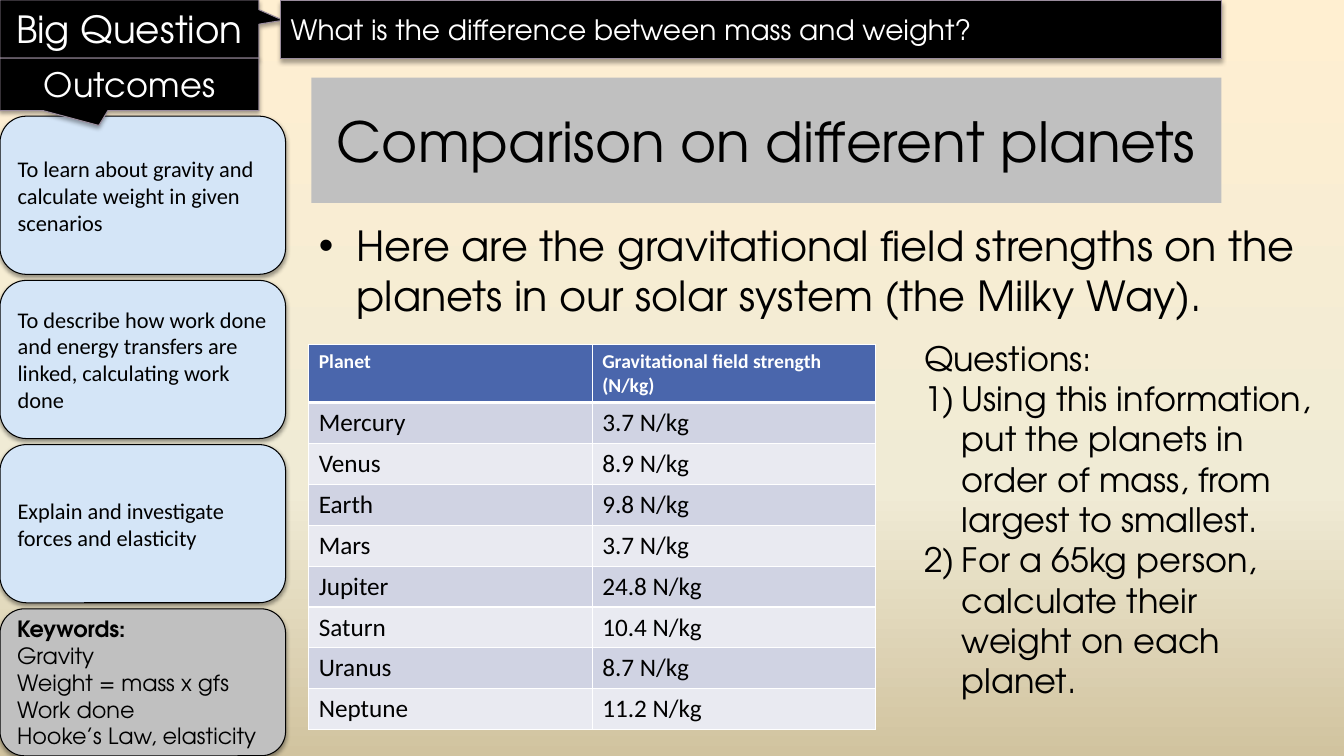
from copy import deepcopy

from lxml.etree import SubElement
from pptx import Presentation
from pptx.dml.color import RGBColor
from pptx.enum.shapes import MSO_SHAPE
from pptx.enum.text import MSO_ANCHOR, MSO_AUTO_SIZE, PP_ALIGN
from pptx.oxml import parse_xml
from pptx.oxml.ns import nsdecls, qn
from pptx.util import Pt

HEADING, BODY = "TeX Gyre Adventor", "Calibri"
BLACK, WHITE, GREY, BLUE = "000000", "FFFFFF", "C0C0C0", "D4E5F7"


def rgb(value):
    return RGBColor.from_string(value)


def write(tf, lines, size, name=HEADING, color=BLACK, align=PP_ALIGN.LEFT, anchor=MSO_ANCHOR.TOP):
    """Fill a text frame with one paragraph per line, all in one format."""
    for key, value in {"word_wrap": True, "auto_size": MSO_AUTO_SIZE.NONE, "vertical_anchor": anchor}.items():
        setattr(tf, key, value)
    tf.text = "\n".join(lines)
    for p in tf.paragraphs:
        p.alignment, p.space_before = align, Pt(0)
        for r in p.runs:
            for key, value in {"size": Pt(size), "name": name, "bold": False}.items():
                setattr(r.font, key, value)
            r.font.color.rgb = rgb(color)


prs = Presentation()
prs.slide_width, prs.slide_height = Pt(960), Pt(540)
s = prs.slides.add_slide(prs.slide_layouts[1])

# Background gradient, top to bottom
fill = s.background.fill
fill.gradient()
fill.gradient_angle = 270
stop_list = s._element.find(".//" + qn("a:gsLst"))
for gs in list(stop_list)[2:]:
    stop_list.remove(gs)
stop_list.append(deepcopy(stop_list[0]))
for stop, (position, color) in zip(fill.gradient_stops, [(0, "FFEFD1"), (0.65, "F0EBD5"), (1, "D1C39F")]):
    stop.position = position
    stop.color.rgb = rgb(color)

# Banner, outcome cards and keywords
CALLOUT, RECT, CARD = MSO_SHAPE.RECTANGULAR_CALLOUT, MSO_SHAPE.RECTANGLE, MSO_SHAPE.ROUNDED_RECTANGLE
outcomes = [
    "To learn about gravity and calculate weight in given scenarios",
    "To describe how work done and energy transfers are linked, calculating work done",
    "Explain and investigate forces and elasticity",
]
keywords = ["Keywords:", "Gravity", "Weight = mass x gfs", "Work done", "Hooke’s Law, elasticity"]
CARD_TOP, CARD_STEP = 83, 117.3
panels = [
    (CALLOUT, (0, 0, 185, 41.5), BLACK, ["Big Question"], 26.7, HEADING, (0.593, -0.15)),
    (RECT, (200.5, 0.5, 672, 41.5), BLACK, ["What is the difference between mass and weight?"], 20, HEADING, ()),
]
for i, outcome in enumerate(outcomes):
    panels.append((CARD, (0, CARD_TOP + i * CARD_STEP, 204, 113), BLUE, [outcome], 16, BODY, ()))
panels += [
    (CARD, (0, CARD_TOP + 3 * CARD_STEP, 204, 105), GREY, keywords, 16, HEADING, ()),
    (CALLOUT, (0, 41.5, 185, 37.5), BLACK, ["Outcomes"], 24, HEADING, (-0.118, 0.783)),
]
for kind, box, color, lines, size, name, pointer in panels:
    sp = s.shapes.add_shape(kind, *map(Pt, box))
    for i, value in enumerate(pointer):
        sp.adjustments[i] = value
    dark = color == BLACK
    sp.fill.solid()
    sp.fill.fore_color.rgb = rgb(color)
    sp.line.color.rgb = rgb("9A8C9D" if dark else BLACK)
    sp.line.width = Pt(0.75)
    alpha, distance = (35000, Pt(1.8)) if dark else (38000, Pt(1.6))
    sp._element.spPr.append(parse_xml(
        f'<a:effectLst {nsdecls("a")}><a:outerShdw blurRad="{Pt(3.1)}" dist="{distance}" dir="5400000" '
        f'rotWithShape="0"><a:srgbClr val="000000"><a:alpha val="{alpha}"/></a:srgbClr>'
        '</a:outerShdw></a:effectLst>'))
    write(sp.text_frame, lines, size, name, WHITE if dark else BLACK,
          PP_ALIGN.CENTER if kind == CALLOUT else PP_ALIGN.LEFT, MSO_ANCHOR.MIDDLE)
    if lines == keywords:
        sp.text_frame.paragraphs[0].runs[0].font.bold = True

# Title and introduction
title, intro = s.shapes.title, s.placeholders[1]
for sp, box in [(title, (222.5, 55.5, 650, 89.5)), (intro, (220.5, 153.5, 725, 84))]:
    sp.left, sp.top, sp.width, sp.height = map(Pt, box)
title.fill.solid()
title.fill.fore_color.rgb = rgb(GREY)
write(title.text_frame, ["Comparison on different planets"], 39.5,
      align=PP_ALIGN.CENTER, anchor=MSO_ANCHOR.MIDDLE)
pPr = intro.text_frame.paragraphs[0]._p.get_or_add_pPr()
pPr.set("marL", "0")
pPr.set("indent", "0")
SubElement(pPr, qn("a:buNone"))
write(intro.text_frame,
      ["Here are the gravitational field strengths on the planets in our solar system (the Milky Way)."], 29.6)

# Table of field strengths
strengths = {"Mercury": 3.7, "Venus": 8.9, "Earth": 9.8, "Mars": 3.7,
             "Jupiter": 24.8, "Saturn": 10.4, "Uranus": 8.7, "Neptune": 11.2}
rows = [("Planet", "Gravitational field strength (N/kg)")]
rows += [(planet, f"{strength} N/kg") for planet, strength in strengths.items()]
table = s.shapes.add_table(len(rows), 2, Pt(220.5), Pt(246.3), Pt(405), Pt(274.6)).table
for i, row in enumerate(rows):
    header = i == 0
    table.rows[i].height = Pt(41 if header else 29.2)
    for j, text in enumerate(row):
        cell = table.cell(i, j)
        tcPr = cell._tc.get_or_add_tcPr()
        for side in ("L", "R", "T", "B"):
            thick = (i, side) in [(0, "B"), (1, "T")]
            tcPr.append(parse_xml(
                f'<a:ln{side} {nsdecls("a")} w="{Pt(3 if thick else 1)}"><a:solidFill>'
                f'<a:srgbClr val="{WHITE}"/></a:solidFill></a:ln{side}>'))
        cell.fill.solid()
        cell.fill.fore_color.rgb = rgb("4A66AC" if header else "D0D3E3" if i % 2 else "E9EAF1")
        cell.text = text
        font = cell.text_frame.paragraphs[0].runs[0].font
        for key, value in {"size": Pt(14 if header else 18), "name": BODY, "bold": header}.items():
            setattr(font, key, value)
        font.color.rgb = rgb(WHITE if header else BLACK)

# Questions
tf = s.shapes.add_textbox(Pt(653), Pt(237.6), Pt(292.5), Pt(269.5)).text_frame
write(tf, [
    "Questions:",
    "Using this information, put the planets in order of mass, from largest to smallest.",
    "For a 65kg person, calculate their weight on each planet.",
], 24)
for p in tf.paragraphs[1:]:
    pPr = p._p.get_or_add_pPr()
    pPr.set("marL", str(Pt(27)))
    pPr.set("indent", str(-Pt(27)))
    SubElement(pPr, qn("a:buAutoNum"), type="arabicParenR")

prs.save("out.pptx")
